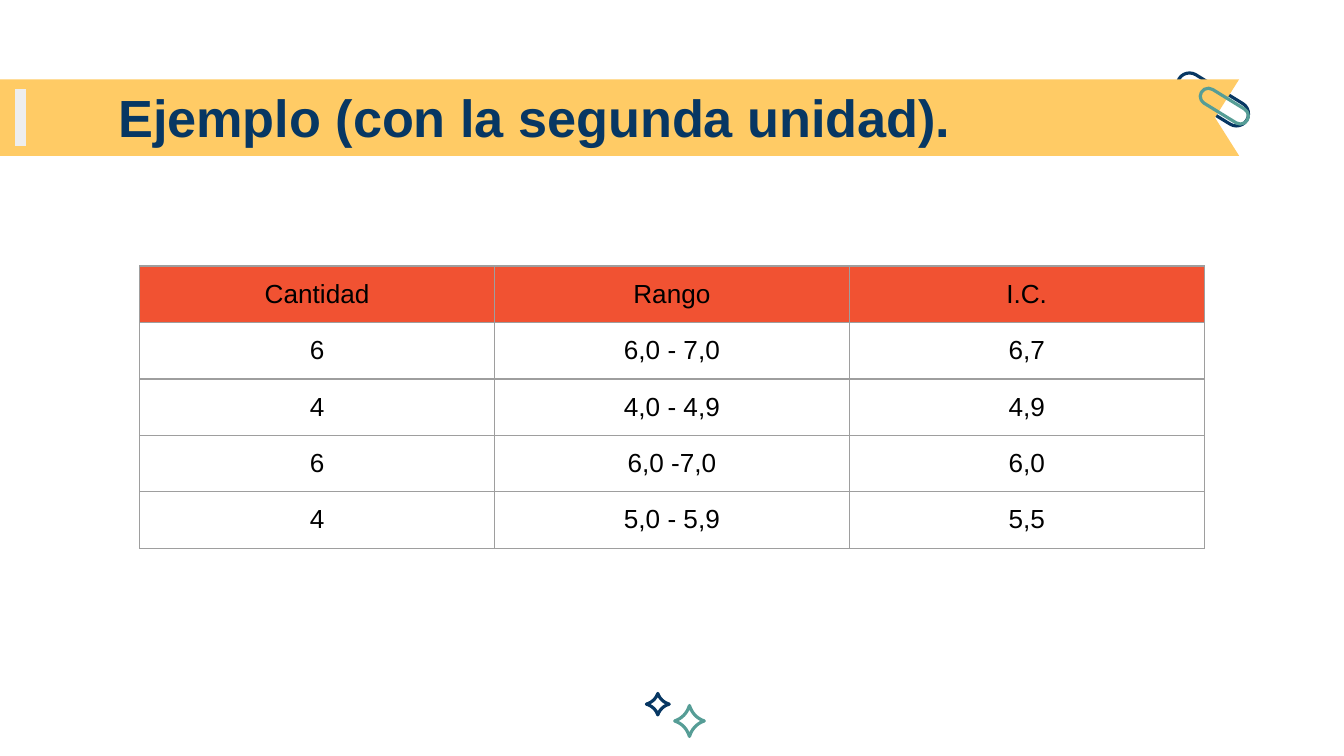
from collections import namedtuple
from dataclasses import dataclass

from lxml import etree
from pptx import Presentation
from pptx import util as u
from pptx.dml.color import RGBColor
from pptx.enum import shapes, text
from pptx.oxml.ns import qn

Box = namedtuple("Box", "left top width height")


@dataclass(frozen=True)
class Theme:
    """Colours, type sizes and line widths of the slide."""
    navy: str = "073763"
    teal: str = "569D96"
    yellow: str = "FFCB65"
    pale: str = "EEEEEE"
    orange: str = "F15232"
    grey: str = "9E9E9E"
    black: str = "000000"
    font: str = "Arial"
    title_size: float = 28
    cell_size: float = 14
    border: float = 0.75
    stroke: float = 1.7


THEME = Theme()
ROWS = [
    ("Cantidad", "Rango", "I.C."),
    ("6", "6,0 - 7,0", "6,7"),
    ("4", "4,0 - 4,9", "4,9"),
    ("6", "6,0 -7,0", "6,0"),
    ("4", "5,0 - 5,9", "5,5"),
]


def apply(target, values):
    """Set every attribute named in values on target."""
    for name, value in values.items():
        setattr(target, name, value)


def lengths(box):
    """Return the four sides of a box as lengths."""
    return [u.Inches(side) for side in box]


def paint(shape, fill=None, line=None):
    """Give a shape a flat fill, a flat outline, or neither."""
    shape.shadow.inherit = False
    for part, color in ((shape.fill, fill), (shape.line.fill, line)):
        if color:
            part.solid()
            part.fore_color.rgb = RGBColor.from_string(color)
        else:
            part.background()
    if line:
        shape.line.width = u.Pt(THEME.stroke)


def add_outline(page, points):
    """Add a closed freeform through points given in inches."""
    start, *rest = [(u.Inches(x), u.Inches(y)) for x, y in points]
    builder = page.shapes.build_freeform(*start)
    builder.add_line_segments(rest, close=True)
    return builder.convert_to_shape()


def add_clip(page, box, color):
    """Draw one tilted paper clip loop."""
    clip = page.shapes.add_shape(shapes.MSO_SHAPE.ROUNDED_RECTANGLE, *lengths(box))
    clip.adjustments[0] = 0.5
    clip.rotation = 31.5
    paint(clip, line=color)


def add_banner(page, box):
    """Draw the notched ribbon with its side mark and paper clips."""
    right, bottom = box.left + box.width, box.top + box.height
    add_clip(page, Box(right - 0.49, box.top + 0.06, 0.59, 0.18), THEME.navy)
    ribbon = add_outline(page, [
        (box.left, box.top), (box.left, bottom), (right, bottom),
        (right - 0.18, box.top + box.height / 2), (right, box.top)])
    paint(ribbon, fill=THEME.yellow)
    mark = add_outline(page, [
        (box.left + x, box.top + y)
        for x, y in ((0.11, 0.07), (0.11, 0.5), (0.19, 0.5), (0.19, 0.07))])
    paint(mark, fill=THEME.pale)
    add_clip(page, Box(right - 0.31, box.top + 0.14, 0.4, 0.12), THEME.teal)


def add_title(page, box, wording):
    """Format the title placeholder and bring it to the front."""
    title = page.shapes.title
    apply(title, dict(zip(Box._fields, lengths(box))))
    frame = title.text_frame
    frame.text = wording
    margin = u.Inches(0.1)
    apply(frame, {
        "margin_left": margin, "margin_right": margin,
        "margin_top": margin, "margin_bottom": margin,
        "word_wrap": True, "auto_size": text.MSO_AUTO_SIZE.NONE,
        "vertical_anchor": text.MSO_ANCHOR.MIDDLE})
    para = frame.paragraphs[0]
    para.alignment = text.PP_ALIGN.LEFT
    span = para.runs[0]
    apply(span.font, {"name": THEME.font, "size": u.Pt(THEME.title_size), "bold": True})
    span.font.color.rgb = RGBColor.from_string(THEME.navy)
    title.element.getparent().append(title.element)


def add_borders(cell):
    """Draw a thin line on all four sides of a cell."""
    properties = cell._tc.get_or_add_tcPr()
    for side in ("a:lnL", "a:lnR", "a:lnT", "a:lnB"):
        line = etree.SubElement(properties, qn(side), w=str(u.Pt(THEME.border)))
        fill = etree.SubElement(line, qn("a:solidFill"))
        etree.SubElement(fill, qn("a:srgbClr"), val=THEME.grey)


def format_cell(cell, wording, header):
    """Write and format one table cell."""
    cell.text = wording
    margin = u.Inches(0.1)
    apply(cell, {"margin_left": margin, "margin_right": margin,
                 "margin_top": margin, "margin_bottom": margin})
    add_borders(cell)
    if header:
        cell.fill.solid()
        cell.fill.fore_color.rgb = RGBColor.from_string(THEME.orange)
    else:
        cell.fill.background()
    para = cell.text_frame.paragraphs[0]
    para.alignment = text.PP_ALIGN.CENTER
    span = para.runs[0]
    apply(span.font, {"name": THEME.font, "size": u.Pt(THEME.cell_size), "bold": False})
    span.font.color.rgb = RGBColor.from_string(THEME.black)


def add_grades(page, box, rows):
    """Place the grades table with equal rows and columns."""
    table = page.shapes.add_table(len(rows), len(rows[0]), *lengths(box)).table
    apply(table, {"first_row": False, "horz_banding": False})
    for row, values in enumerate(rows):
        for column, wording in enumerate(values):
            format_cell(table.cell(row, column), wording, header=row == 0)


def add_sparkle(page, box, color, steps=8):
    """Draw a four-pointed star whose sides curve towards its centre."""
    x, y = box.left + box.width / 2, box.top + box.height / 2
    tips = [(x, box.top), (box.left + box.width, y),
            (x, box.top + box.height), (box.left, y)]
    points = []
    for start, end in zip(tips, tips[1:] + tips[:1]):
        for step in range(steps):
            t = step / steps
            points.append(tuple(
                (1 - t) ** 2 * a + t * (1 - t) * (c + (a + b) / 2) + t ** 2 * b
                for a, b, c in zip(start, end, (x, y))))
    star = add_outline(page, points)
    paint(star, line=color)
    etree.SubElement(star.line._get_or_add_ln(), qn("a:round"))


def add_sparkles(page, box):
    """Place the small navy star and the larger teal star."""
    add_sparkle(page, Box(box.left + 0.23, box.top + 0.11, 0.22, 0.23), THEME.teal)
    add_sparkle(page, Box(box.left + 0.02, box.top + 0.02, 0.17, 0.16), THEME.navy)


def main():
    """Build the slide and save it."""
    deck = Presentation()
    width = u.Inches(10)
    apply(deck, {"slide_width": width, "slide_height": width * 9 // 16})
    page = deck.slides.add_slide(deck.slide_layouts[5])
    add_banner(page, Box(0, 0.59, 9.22, 0.57))
    add_sparkles(page, Box(4.79, 5.14, 0.47, 0.35))
    add_title(page, Box(0.78, 0.61, 8.44, 0.52), "Ejemplo (con la segunda unidad).")
    add_grades(page, Box(1.04, 1.98, 7.92, 2.1), ROWS)
    deck.save("out.pptx")


if __name__ == "__main__":
    main()
